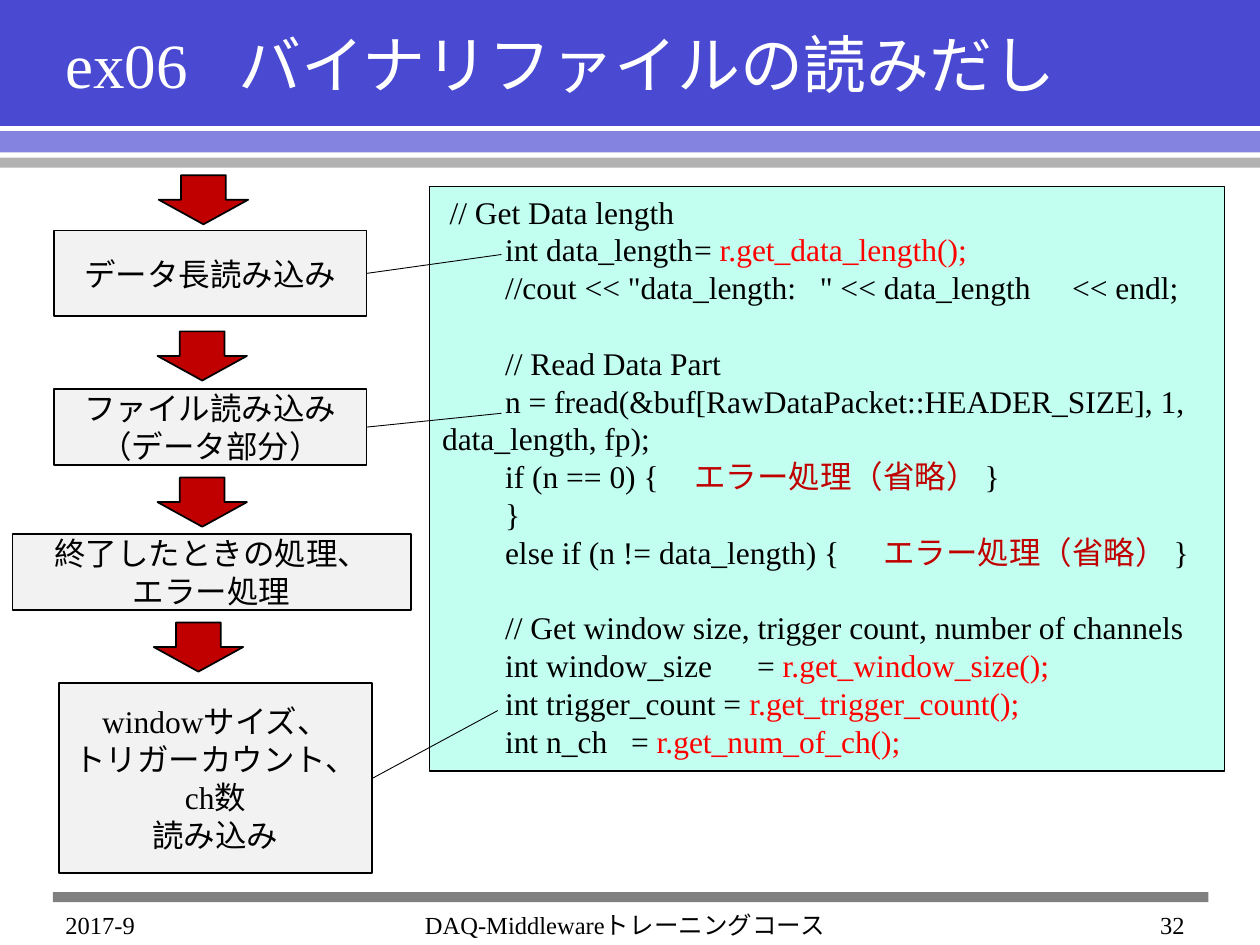
from lxml import etree
from pptx import Presentation
from pptx.dml.color import RGBColor
from pptx.enum.shapes import MSO_CONNECTOR, MSO_SHAPE
from pptx.enum.text import MSO_ANCHOR, MSO_AUTO_SIZE, PP_ALIGN
from pptx.oxml.ns import qn
from pptx.util import Inches, Pt

RECT, ARROW = MSO_SHAPE.RECTANGLE, MSO_SHAPE.DOWN_ARROW
LINE = MSO_CONNECTOR.STRAIGHT
MIDDLE, TOP = MSO_ANCHOR.MIDDLE, MSO_ANCHOR.TOP
LEFT, CENTER, RIGHT = PP_ALIGN.LEFT, PP_ALIGN.CENTER, PP_ALIGN.RIGHT
FIXED = MSO_AUTO_SIZE.NONE
FONT = "Times New Roman"
HUES = {
    "ink": "000000", "white": "FFFFFF", "blue": "4949D1", "pale": "8484E0",
    "silver": "B2B2B2", "gray": "808080", "mint": "C2FFF0", "box": "F2F2F2",
    "red": "FF0000", "dark": "C00000",
}

deck = Presentation()
deck.slide_width, deck.slide_height = Inches(10), Inches(7.5)
col, row = deck.slide_width / 100, deck.slide_height / 75
slide = deck.slides.add_slide(deck.slide_layouts[5])
shapes = slide.shapes


def write(para, text, size=18, hue="ink", align=LEFT):
    para.alignment = align
    run = para.add_run()
    run.text = text
    run.font.name = FONT
    run.font.size = Pt(size)
    run.font.color.rgb = RGBColor.from_string(HUES[hue])


def draw(kind, x, y, wide, high, fill, edge=0):
    shape = shapes.add_shape(kind, int(x * col), int(y * row), int(wide * col), int(high * row))
    shape.shadow.inherit = False
    shape.fill.solid()
    shape.fill.fore_color.rgb = RGBColor.from_string(HUES[fill])
    if edge:
        shape.line.color.rgb = RGBColor.from_string(HUES["ink"])
        shape.line.width = Pt(edge)
    else:
        shape.line.fill.background()
    return shape


bars = [
    (0, 0, 100, 10, "blue"),
    (0, 10.4, 100, 1.7, "pale"),
    (0, 12.5, 100, 0.8, "silver"),
    (4.2, 70.8, 91.7, 0.8, "gray"),
]
for bar in bars:
    draw(RECT, *bar)

title = shapes.title
title.left, title.top = int(4.2 * col), 0
title.width, title.height = int(93.1 * col), int(10 * row)
shapes._spTree.append(title._element)
frame = title.text_frame
frame.auto_size = FIXED
frame.vertical_anchor = MIDDLE
head = frame.paragraphs[0]
write(head, "ex06\tバイナリファイルの読みだし", size=36, hue="white")

foot = [
    (4.2, 20.8, "2017-9", LEFT),
    (31.1, 37, "DAQ-Middlewareトレーニングコース", CENTER),
    (74.2, 20.8, "32", RIGHT),
]
for x, wide, text, align in foot:
    area = shapes.add_textbox(int(x * col), int(71.7 * row), int(wide * col), int(3.3 * row))
    area.text_frame.word_wrap = True
    write(area.text_frame.paragraphs[0], text, size=14, align=align)

code = [
    (0.06, 0, 0, [("// Get Data length", "ink")]),
    (0.5, 0, 2.18, [("int data_length\t= ", "ink"), ("r.get_data_length();", "red")]),
    (0.5, 0, 4.87, [('//cout << "data_length:   " << data_length\t<< endl;', "ink")]),
    (0.5, 1, 0, [("// Read Data Part", "ink")]),
    (0.5, 0, 0, [("n = fread(&buf[RawDataPacket::HEADER_SIZE], 1, data_length, fp);", "ink")]),
    (0.5, 0, 1.91, [("if (n == 0) {\t", "ink"), ("エラー処理（省略） ", "dark"), ("}", "ink")]),
    (0.5, 0, 0, [("}", "ink")]),
    (0.5, 0, 3.4, [("else if (n != data_length) {\t", "ink"), ("エラー処理（省略） ", "dark"), ("}", "ink")]),
    (0.5, 1, 0, [("// Get window size, trigger count, number of channels", "ink")]),
    (0.5, 0, 2.34, [("int window_size\t= ", "ink"), ("r.get_window_size();", "red")]),
    (0.5, 0, 0, [("int trigger_count = ", "ink"), ("r.get_trigger_count();", "red")]),
    (0.5, 0, 1.94, [("int n_ch\t= ", "ink"), ("r.get_num_of_ch();", "red")]),
]
panel = draw(RECT, 34.1, 14.8, 63.1, 46.4, "mint", edge=0.75)
frame = panel.text_frame
frame.word_wrap = True
frame.vertical_anchor = TOP
stops = [(head, 1.37)]
for num, (indent, gap, tab, parts) in enumerate(code):
    para = frame.add_paragraph() if num else frame.paragraphs[0]
    for text, hue in parts:
        write(para, text, hue=hue)
    para.space_before = Pt(21.6 * gap)
    props = para._p.get_or_add_pPr()
    props.set("marL", "0")
    props.set("indent", str(Inches(indent)))
    if tab:
        stops.append((para, tab))

for para, tab in stops:
    tabs = etree.SubElement(para._p.get_or_add_pPr(), qn("a:tabLst"))
    etree.SubElement(tabs, qn("a:tab"), pos=str(Inches(tab)), algn="l")

steps = [
    (4.3, 18.3, 24.8, 6.8, ["データ長読み込み"]),
    (4.3, 30.9, 24.8, 6, ["ファイル読み込み", "（データ部分）"]),
    (1, 42.4, 31.6, 6, ["終了したときの処理、", "エラー処理"]),
    (4.7, 54.2, 24.8, 15.1, ["windowサイズ、", "トリガーカウント、", "ch数", "読み込み"]),
]
for x, y, wide, high, lines in steps:
    frame = draw(RECT, x, y, wide, high, "box", edge=1).text_frame
    frame.word_wrap = True
    frame.vertical_anchor = MIDDLE
    for num, text in enumerate(lines):
        para = frame.add_paragraph() if num else frame.paragraphs[0]
        write(para, text, align=CENTER)

for x, y in [(12.6, 13.9), (12.5, 26.3), (12.5, 37.9), (12.2, 49.4)]:
    draw(ARROW, x, y, 7.1, 3.9, "dark", edge=1)

links = [(29.1, 21.7, 39.8, 20.2), (29.1, 33.9, 39.8, 32.8), (29.5, 61.8, 39.5, 56.4)]
for x, y, right, end in links:
    link = shapes.add_connector(LINE, int(x * col), int(y * row), int(right * col), int(end * row))
    link.line.color.rgb = RGBColor.from_string(HUES["ink"])
    link.line.width = Pt(0.5)
    etree.SubElement(link._element.spPr, qn("a:effectLst"))

deck.save("out.pptx")
